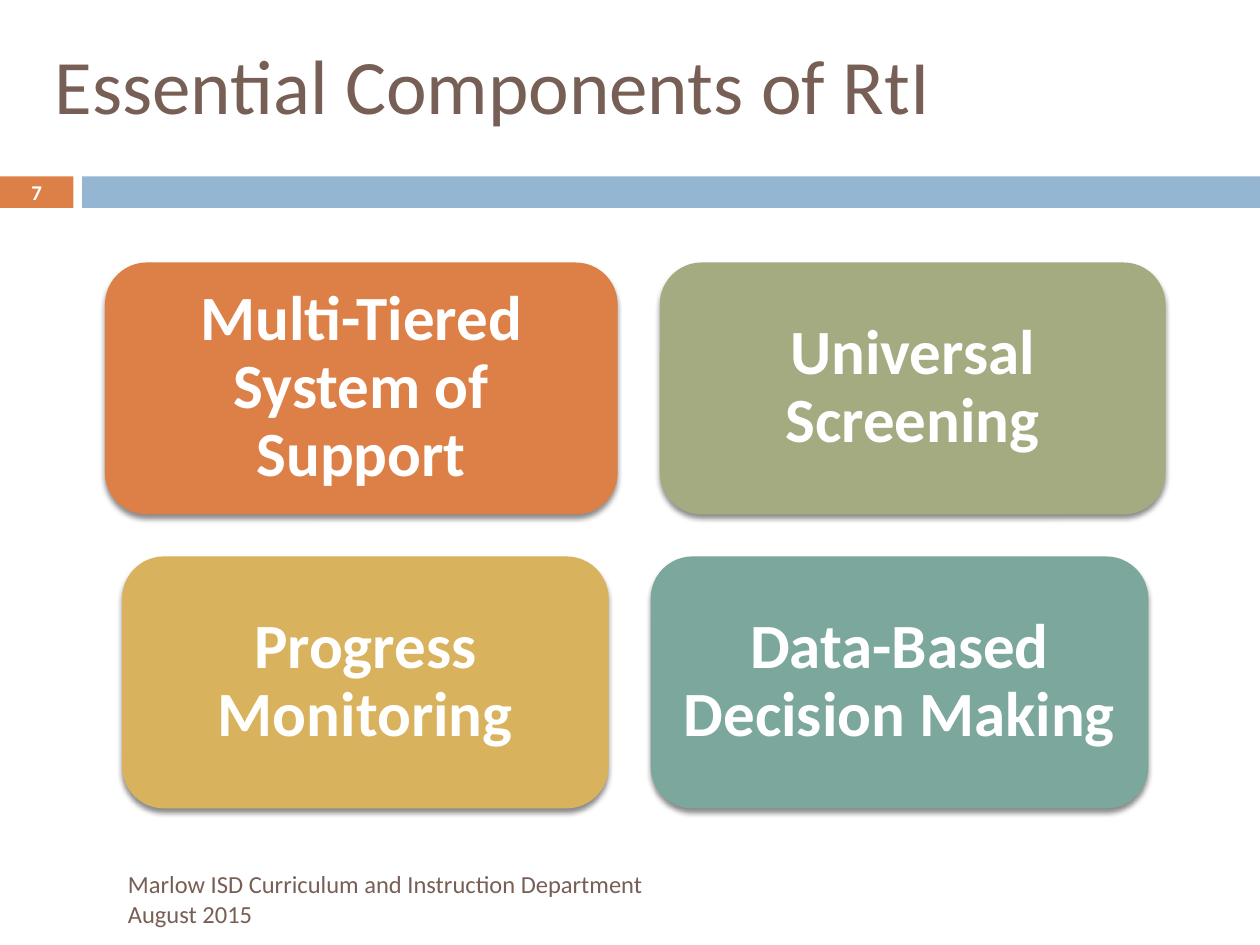
from dataclasses import dataclass

from lxml import etree
from pptx import Presentation
from pptx.dml.color import RGBColor
from pptx.enum import shapes, text
from pptx.oxml import ns
from pptx.util import Pt


@dataclass(frozen=True)
class Theme:
    font: str = "Calibri"
    brown: str = "775F55"
    white: str = "FFFFFF"
    orange: str = "DD8047"
    blue: str = "94B6D2"
    green: str = "A5AB81"
    gold: str = "D8B25C"
    teal: str = "7BA79D"
    title_size: float = 44
    card_size: float = 36
    footer_size: float = 14
    number_size: float = 12


THEME = Theme()
ROWS = [
    [("Multi-Tiered System of Support", THEME.orange, 293),
     ("Universal Screening", THEME.green, 289)],
    [("Progress Monitoring", THEME.gold, 278),
     ("Data-Based Decision Making", THEME.teal, 284.4)],
]


def apply(target, formats):
    for name, value in formats.items():
        setattr(target, name, value)


def write(shape, words, size, color, bold=False, align=text.PP_ALIGN.LEFT,
          anchor=text.MSO_ANCHOR.MIDDLE, inset=None, spacing=None):
    frame = shape.text_frame
    apply(frame, {"text": words, "word_wrap": True, "vertical_anchor": anchor,
                  "auto_size": text.MSO_AUTO_SIZE.NONE})
    if inset is not None:
        apply(frame, {f"margin_{side}": Pt(inset)
                      for side in ("left", "top", "right", "bottom")})
    para = frame.paragraphs[0]
    apply(para, {"alignment": align, "line_spacing": spacing})
    for span in para.runs:
        apply(span.font, {"name": THEME.font, "size": Pt(size), "bold": bold})
        span.font.color.rgb = RGBColor.from_string(color)


def add_block(page, kind, box, fill):
    """Add a filled shape without outline or shadow."""
    block = page.shapes.add_shape(kind, *map(Pt, box))
    block.shadow.inherit = False
    block.fill.solid()
    block.fill.fore_color.rgb = RGBColor.from_string(fill)
    block.line.fill.background()
    return block


def add_soft_shadow(shape):
    effects = shape._element.spPr.find(ns.qn("a:effectLst"))
    shadow = etree.SubElement(effects, ns.qn("a:outerShdw"), blurRad=str(Pt(3)),
                              dist=str(Pt(2.4)), dir="5400000", rotWithShape="0")
    color = etree.SubElement(shadow, ns.qn("a:srgbClr"), val="000000")
    etree.SubElement(color, ns.qn("a:alpha"), val="45000")


def place_title(page, box, words):
    title = page.shapes.title
    apply(title, dict(zip(("left", "top", "width", "height"), map(Pt, box))))
    write(title, words, THEME.title_size, THEME.brown, anchor=text.MSO_ANCHOR.TOP)


def place_band(page, box, number):
    """Draw the page number tab and the bar to its right."""
    left, top, width, height = box
    tab, gap = 42, 5
    rectangle = shapes.MSO_SHAPE.RECTANGLE
    marker = add_block(page, rectangle, (left, top, tab, height), THEME.orange)
    write(marker, number, THEME.number_size, THEME.white, bold=True,
          align=text.PP_ALIGN.CENTER, inset=0)
    start = tab + gap
    add_block(page, rectangle, (left + start, top, width - start, height), THEME.blue)


def place_cards(page, box, rows, gap=24):
    """Stack rows of cards, each row centred in the box."""
    left, top, width, height = box
    card_height = (height - gap * (len(rows) - 1)) / len(rows)
    for index, row in enumerate(rows):
        row_width = sum(card[2] for card in row) + gap * (len(row) - 1)
        x = left + (width - row_width) / 2
        y = top + index * (card_height + gap)
        for words, fill, card_width in row:
            card = add_block(page, shapes.MSO_SHAPE.FLOWCHART_ALTERNATE_PROCESS,
                             (x, y, card_width, card_height), fill)
            add_soft_shadow(card)
            write(card, words, THEME.card_size, THEME.white, bold=True,
                  align=text.PP_ALIGN.CENTER, inset=10.8, spacing=0.9)
            x += card_width + gap


def place_footer(page, box, words):
    footer = page.shapes.add_textbox(*map(Pt, box))
    write(footer, words, THEME.footer_size, THEME.brown)


def main():
    deck = Presentation()
    apply(deck, {"slide_width": Pt(720), "slide_height": Pt(540)})
    page = deck.slides.add_slide(deck.slide_layouts[5])
    place_title(page, (24, 18, 642, 78), "Essential Components of RtI")
    place_band(page, (0, 100.8, 720, 18), "7")
    place_cards(page, (60, 150, 606, 312), ROWS)
    place_footer(page, (66, 499, 600, 29),
                 "Marlow ISD Curriculum and Instruction Department\vAugust 2015")
    deck.save("out.pptx")


if __name__ == "__main__":
    main()
